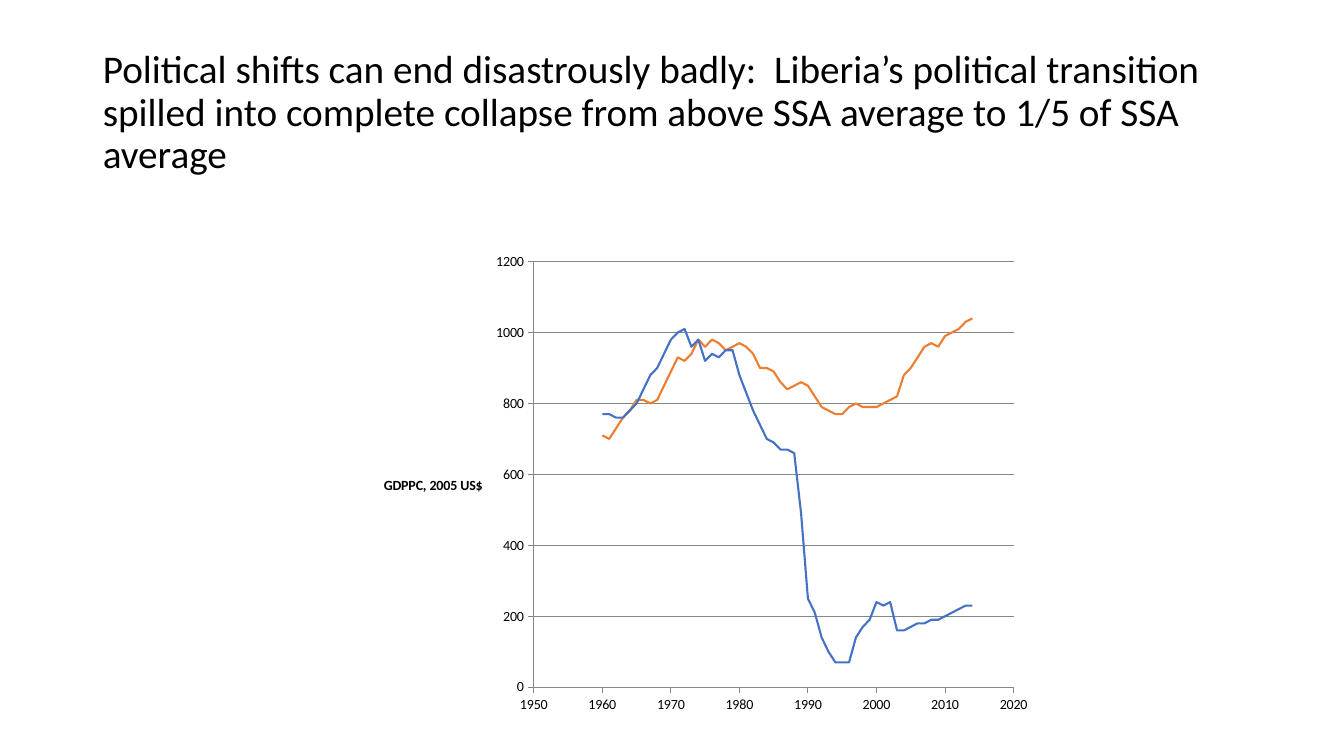
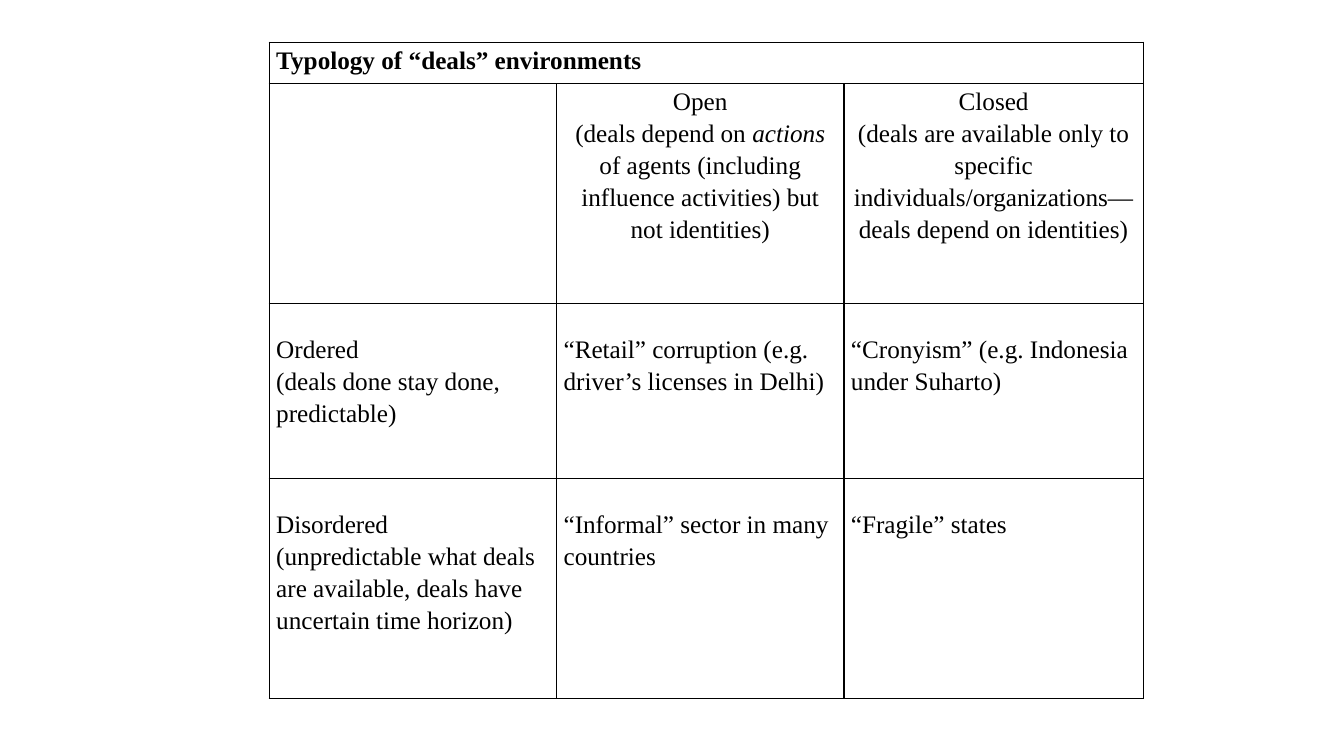
"""Build two slides: a GDP chart on Liberia and a table of deals environments."""
import pptx
import pptx.chart.data
import pptx.dml.color
import pptx.enum.chart
import pptx.enum.text
import pptx.oxml
import pptx.oxml.ns
import pptx.util

Inches, Pt = pptx.util.Inches, pptx.util.Pt
ALIGN = pptx.enum.text.PP_ALIGN
COLORS = {"text": "000000", "paper": "FFFFFF", "axis": "868686",
          "liberia": "4472C4", "africa": "ED7D31"}
SANS, SERIF = "Calibri", "Times New Roman"

TITLE = ("Political shifts can end disastrously badly:  Liberia’s political transition "
         "spilled into complete collapse from above SSA average to 1/5 of SSA average")
AXIS_TITLE = "GDPPC, 2005 US$"
FIRST_YEAR = 1960
SERIES = [
    ("Series 1", "liberia", [
        770, 770, 760, 760, 780, 800, 840, 880, 900, 940, 980, 1000, 1010, 960, 980,
        920, 940, 930, 950, 950, 880, 830, 780, 740, 700, 690, 670, 670, 660, 490,
        250, 210, 140, 100, 70, 70, 70, 140, 170, 190, 240, 230, 240, 160, 160,
        170, 180, 180, 190, 190, 200, 210, 220, 230, 230]),
    ("Series 2", "africa", [
        710, 700, 730, 760, 780, 810, 810, 800, 810, 850, 890, 930, 920, 940, 980,
        960, 980, 970, 950, 960, 970, 960, 940, 900, 900, 890, 860, 840, 850, 860,
        850, 820, 790, 780, 770, 770, 790, 800, 790, 790, 790, 800, 810, 820, 880,
        900, 930, 960, 970, 960, 990, 1000, 1010, 1030, 1040]),
]

COLUMN_WIDTHS = [2.85, 2.85, 2.97]
ROW_HEIGHTS = [0.41, 2.18, 1.74, 2.18]
ROW_TOP_INSETS = [0, 0, 0.28, 0.28]
HEADING_ROW, COLUMN_HEAD_ROW = 0, 1
DEALS = [
    [[["Typology of “deals” environments"]], [], []],
    [[],
     [["Open"], ["(deals depend on ", "actions",
                 " of agents (including influence activities) but not identities)"]],
     [["Closed"], ["(deals are available only to specific "
                   "individuals/organizations—deals depend on identities)"]]],
    [[["Ordered"], ["(deals done stay done, predictable)"]],
     [["“Retail” corruption (e.g. driver’s licenses in Delhi)"]],
     [["“Cronyism” (e.g. Indonesia under Suharto)"]]],
    [[["Disordered"],
      ["(unpredictable what deals are available, deals have uncertain time horizon)"]],
     [["“Informal” sector in many countries"]],
     [["“Fragile” states"]]],
]
ITALIC_WORDS = {"actions"}


def rgb(name):
    return pptx.dml.color.RGBColor.from_string(COLORS[name])


def style_font(font, name, size, bold=False, italic=False):
    font.name, font.size, font.bold, font.italic = name, Pt(size), bold, italic
    font.color.rgb = rgb("text")


def add_span(para, text, *style, **options):
    span = para.add_run()
    span.text = text
    style_font(span.font, *style, **options)


def add_title(page, text):
    box = page.shapes.title
    box.left, box.top, box.width, box.height = map(Inches, (0.92, 0.4, 11.5, 1.45))
    frame = box.text_frame
    frame.word_wrap = True
    frame.auto_size = pptx.enum.text.MSO_AUTO_SIZE.NONE
    frame.vertical_anchor = pptx.enum.text.MSO_ANCHOR.MIDDLE
    para = frame.paragraphs[0]
    para.alignment, para.line_spacing = ALIGN.LEFT, 0.9
    add_span(para, text, SANS, 28)


def place_in_chart(element, index, inner=False, **fractions):
    for old in element.findall(pptx.oxml.ns.qn("c:layout")):
        element.remove(old)
    target = '<c:layoutTarget val="inner"/>' if inner else ""
    modes = '<c:xMode val="edge"/><c:yMode val="edge"/>'
    sizes = "".join(f'<c:{key} val="{value}"/>' for key, value in fractions.items())
    element.insert(index, pptx.oxml.parse_xml(
        f'<c:layout {pptx.oxml.ns.nsdecls("c")}><c:manualLayout>'
        f'{target}{modes}{sizes}</c:manualLayout></c:layout>'))


def style_axis(axis, low, high, step):
    axis.minimum_scale, axis.maximum_scale, axis.major_unit = low, high, step
    axis.major_tick_mark = pptx.enum.chart.XL_TICK_MARK.OUTSIDE
    axis.minor_tick_mark = pptx.enum.chart.XL_TICK_MARK.NONE
    axis.format.line.color.rgb = rgb("axis")
    axis.format.line.width = Pt(0.75)
    style_font(axis.tick_labels.font, SANS, 10)


def add_gdp_chart(page):
    data = pptx.chart.data.XyChartData()
    for name, _, values in SERIES:
        points = data.add_series(name)
        for year, value in enumerate(values, FIRST_YEAR):
            points.add_data_point(year, value)
    chart = page.shapes.add_chart(
        pptx.enum.chart.XL_CHART_TYPE.XY_SCATTER_SMOOTH_NO_MARKERS,
        *map(Inches, (3.58, 2.42, 6.75, 4.75)), data).chart
    chart.has_legend = chart.has_title = False
    style_font(chart.font, SANS, 10)
    for plotted, (_, color, _) in zip(chart.plots[0].series, SERIES):
        plotted.smooth = True
        plotted.marker.style = pptx.enum.chart.XL_MARKER_STYLE.NONE
        plotted.format.line.color.rgb = rgb(color)
        plotted.format.line.width = Pt(1.5)
    chart.plots[0].vary_by_categories = False

    years, dollars = chart.category_axis, chart.value_axis
    style_axis(years, 1950, 2020, 10)
    style_axis(dollars, 0, 1200, 200)
    years.has_major_gridlines = False
    dollars.has_major_gridlines = True
    dollars.major_gridlines.format.line.color.rgb = rgb("axis")
    dollars.major_gridlines.format.line.width = Pt(0.75)

    heading = dollars.axis_title
    add_span(heading.text_frame.paragraphs[0], AXIS_TITLE, SANS, 10, bold=True)
    title_xml = heading._element
    body = title_xml.xpath(".//a:bodyPr")[0]
    body.set("rot", "0")
    body.set("vert", "horz")
    place_in_chart(title_xml, 1, x=0.03, y=0.48)
    plot_area = chart._chartSpace.xpath("c:chart/c:plotArea")[0]
    place_in_chart(plot_area, 0, inner=True, x=0.254, y=0.037, w=0.705, h=0.889)


def add_borders(cell):
    properties = cell._tc.get_or_add_tcPr()
    for index, side in enumerate(("lnL", "lnR", "lnT", "lnB")):
        properties.insert(index, pptx.oxml.parse_xml(
            f'<a:{side} {pptx.oxml.ns.nsdecls("a")} w="{Pt(1)}"><a:solidFill>'
            f'<a:srgbClr val="{COLORS["text"]}"/></a:solidFill></a:{side}>'))


def fill_cell(cell, paragraphs, row):
    cell.fill.solid()
    cell.fill.fore_color.rgb = rgb("paper")
    add_borders(cell)
    cell.margin_left = cell.margin_right = Inches(0.07)
    cell.margin_top, cell.margin_bottom = Inches(ROW_TOP_INSETS[row]), 0
    frame = cell.text_frame
    for index, spans in enumerate(paragraphs):
        para = frame.add_paragraph() if index else frame.paragraphs[0]
        para.line_spacing = 1.15
        para.alignment = ALIGN.CENTER if row == COLUMN_HEAD_ROW else ALIGN.LEFT
        for text in spans:
            add_span(para, text, SERIF, 18, bold=row == HEADING_ROW,
                     italic=text in ITALIC_WORDS)


def add_deals_table(page):
    table = page.shapes.add_table(
        len(ROW_HEIGHTS), len(COLUMN_WIDTHS), Inches(2.67), Inches(0.42),
        Inches(sum(COLUMN_WIDTHS)), Inches(sum(ROW_HEIGHTS))).table
    table.first_row = table.horz_banding = False
    for column, width in zip(table.columns, COLUMN_WIDTHS):
        column.width = Inches(width)
    for line, height in zip(table.rows, ROW_HEIGHTS):
        line.height = Inches(height)
    table.cell(0, 0).merge(table.cell(0, len(COLUMN_WIDTHS) - 1))
    for row, cells in enumerate(DEALS):
        for column, paragraphs in enumerate(cells):
            fill_cell(table.cell(row, column), paragraphs, row)


def main():
    deck = pptx.Presentation()
    deck.slide_width, deck.slide_height = Inches(13.33), Inches(7.5)
    title_only, blank = deck.slide_layouts[5], deck.slide_layouts[6]
    chart_page = deck.slides.add_slide(title_only)
    add_title(chart_page, TITLE)
    add_gdp_chart(chart_page)
    add_deals_table(deck.slides.add_slide(blank))
    deck.save("out.pptx")


if __name__ == "__main__":
    main()
